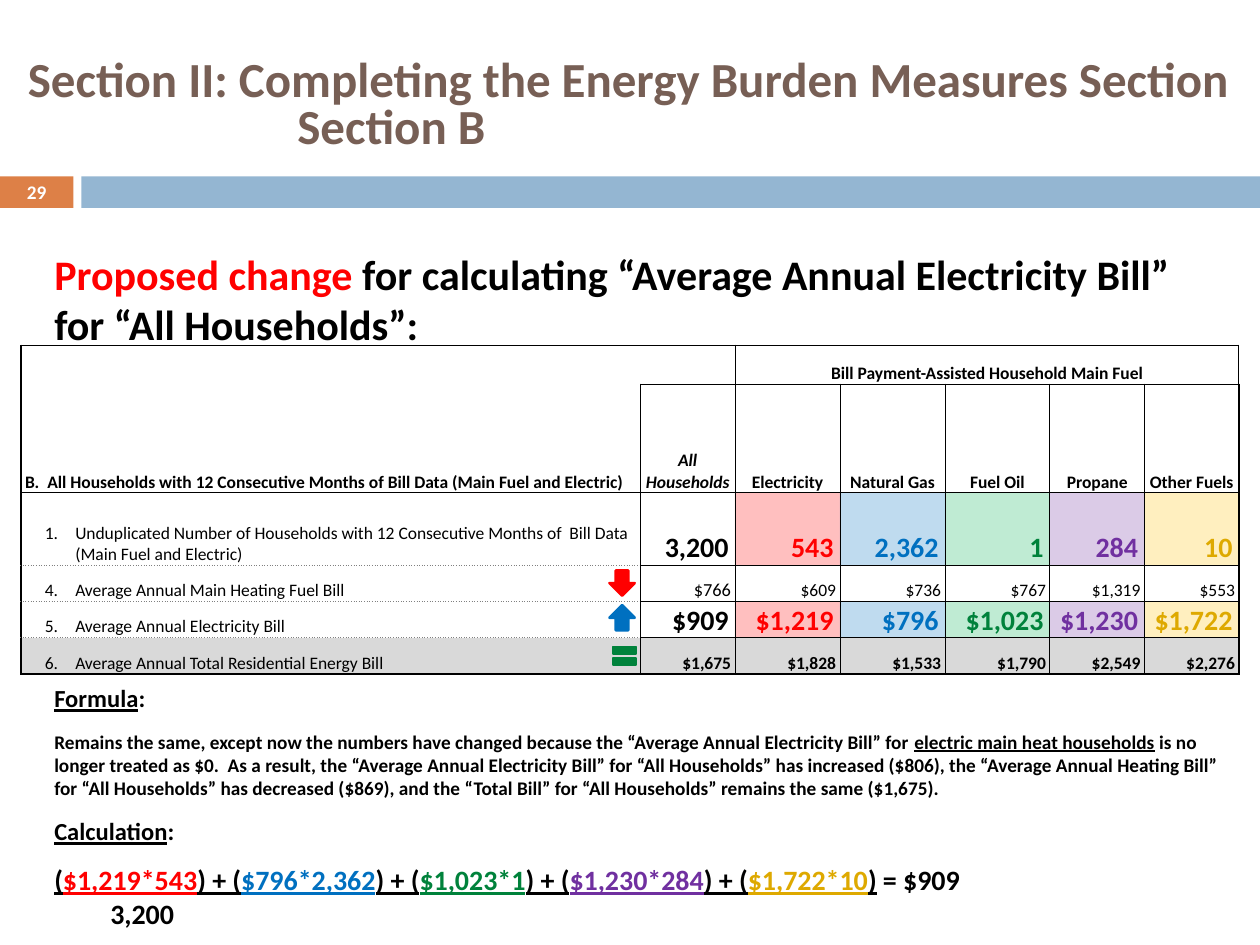
import pptx
import pptx.util
import pptx.dml.color
import pptx.enum.shapes
import pptx.enum.text
import lxml.etree
from pptx.oxml.ns import qn

Pt = pptx.util.Pt
SHAPE = pptx.enum.shapes.MSO_SHAPE
ALIGN = pptx.enum.text.PP_ALIGN
ANCHOR = pptx.enum.text.MSO_ANCHOR
FONT = "Calibri"
BLACK, WHITE, GREY = "000000", "FFFFFF", "D9D9D9"
RED, BLUE, GREEN, PURPLE, GOLD = "FF0000", "0070C0", "00823B", "7030A0", "DEA900"
FUEL_COLOURS = [RED, BLUE, GREEN, PURPLE, GOLD]
FUEL_TINTS = [RED, BLUE, "00B050", PURPLE, "FFC000"]

# Content
TITLE = "Section II: Completing the Energy Burden Measures Section Section B"
PAGE_NUMBER = "29"
FORMULA_TERMS = ["$1,219*543", "$796*2,362", "$1,023*1", "$1,230*284", "$1,722*10"]
UNDER = {"underline": True}

calculation = [("(", UNDER)]
for number, (term, tone) in enumerate(zip(FORMULA_TERMS, FUEL_COLOURS)):
    joint = ") + (" if number < len(FORMULA_TERMS) - 1 else ")"
    calculation += [(term, {"underline": True, "color": tone}), (joint, UNDER)]
calculation.append((" = $909", {}))

# Each paragraph: size, space before, left indent, spans
BODY = [
    (24, 0, 0, [("Proposed change ", {"color": RED}),
                ("for calculating “Average Annual Electricity Bill” for “All Households”:", {})]),
    (14, 191, 0, [("Formula", UNDER), (":", {})]),
    (11, 9.8, 0, [
        ("Remains the same, except now the numbers have changed because the "
         "“Average Annual Electricity Bill” for ", {}),
        ("electric main heat households", UNDER),
        (" is no longer treated as $0.  As a result, the “Average Annual Electricity Bill” "
         "for “All Households” has increased ($806), the “Average Annual Heating Bill” for "
         "“All Households” has decreased ($869), and the “Total Bill” for “All Households” "
         "remains the same ($1,675).", {})]),
    (14, 9.8, 0, [("Calculation", UNDER), (":", {})]),
    (16, 9.8, 0, calculation),
    (16, 0, 32, [("3,200", {})]),
]

SPAN_HEADING = "Bill Payment-Assisted Household Main Fuel"
HEADINGS = ["B.  All Households with 12 Consecutive Months of Bill Data (Main Fuel and Electric)",
            "All Households", "Electricity", "Natural Gas", "Fuel Oil", "Propane", "Other Fuels"]
# Each row: label, kind, values
MEASURES = [
    ("1.\tUnduplicated Number of Households with 12 Consecutive Months of  Bill Data "
     "(Main Fuel and Electric)", "key", ["3,200", "543", "2,362", "1", "284", "10"]),
    ("4.\tAverage Annual Main Heating Fuel Bill", "plain",
     ["$766", "$609", "$736", "$767", "$1,319", "$553"]),
    ("5.\tAverage Annual Electricity Bill", "key",
     ["$909", "$1,219", "$796", "$1,023", "$1,230", "$1,722"]),
    ("6.\tAverage Annual Total Residential Energy Bill", "total",
     ["$1,675", "$1,828", "$1,533", "$1,790", "$2,549", "$2,276"]),
]
COLUMN_WIDTHS = [354, 54, 60, 60, 60, 54, 54]
ROW_UNIT = 20.72
ROW_UNITS = [1, 3, 2, 1, 1, 1]
TABLE_LEFT, TABLE_TOP = 12, 197.4


def colour(value):
    return pptx.dml.color.RGBColor.from_string(value)


def add_span(para, text, **changes):
    span = para.add_run()
    span.text = text
    values = {"name": FONT, "size": 10, "bold": False, "color": BLACK, **changes}
    span.font.color.rgb = colour(values.pop("color"))
    values["size"] = Pt(values["size"])
    for name, value in values.items():
        setattr(span.font, name, value)


def set_frame(frame, **changes):
    values = {"word_wrap": True, "auto_size": pptx.enum.text.MSO_AUTO_SIZE.NONE, **changes}
    for name, value in values.items():
        setattr(frame, name, value)


def place(shape, left, top, width, height):
    shape.left, shape.top, shape.width, shape.height = map(Pt, (left, top, width, height))


def indent(para, left, first=0):
    properties = para._p.get_or_add_pPr()
    properties.set("marL", str(Pt(left)))
    properties.set("indent", str(Pt(first)))
    return properties


def add_block(page, kind, box, fill, line_width=0):
    block = page.shapes.add_shape(kind, *map(Pt, box))
    block.shadow.inherit = False
    block.fill.solid()
    block.fill.fore_color.rgb = colour(fill)
    if line_width:
        block.line.color.rgb = colour(fill)
        block.line.width = Pt(line_width)
    else:
        block.line.fill.background()


def border_of(row, column, side):
    """Width, colour and dash of one side of a cell; None for no line."""
    outer = {"L": column == 0, "R": column == 6, "T": row == 0, "B": row == 5}
    if outer[side]:
        return 1, BLACK, "solid"
    open_sides = {(0, 0): "RB", (0, 1): "L", (1, 0): "T"}
    if side in open_sides.get((row, column), ""):
        return None
    if column == 0 and ((side == "T" and row > 2) or (side == "B" and row > 1)):
        return 0.75, "808080", "sysDot"
    return 0.5, BLACK, "solid"


def draw_borders(cell, row, column):
    properties = cell._tc.get_or_add_tcPr()
    for side in "LRTB":
        line = lxml.etree.SubElement(properties, qn("a:ln" + side))
        border = border_of(row, column, side)
        if border is None:
            lxml.etree.SubElement(line, qn("a:noFill"))
            continue
        width, tone, dash = border
        line.set("w", str(Pt(width)))
        fill = lxml.etree.SubElement(line, qn("a:solidFill"))
        lxml.etree.SubElement(fill, qn("a:srgbClr"), val=tone)
        lxml.etree.SubElement(line, qn("a:prstDash"), val=dash)


def fill_cell(cell, tone=None, opacity=100):
    if tone is None:
        cell.fill.background()
        return
    cell.fill.solid()
    cell.fill.fore_color.rgb = colour(tone)
    if opacity < 100:
        fill = cell._tc.tcPr.find(qn("a:solidFill"))
        lxml.etree.SubElement(fill[0], qn("a:alpha"), val=str(opacity * 1000))


def write_cell(cell, text, align, **font):
    para = cell.text_frame.paragraphs[0]
    para.alignment = align
    add_span(para, text, **font)
    return para


deck = pptx.Presentation()
deck.slide_width, deck.slide_height = Pt(720), Pt(540)
page = deck.slides.add_slide(deck.slide_layouts[1])
title, body = page.placeholders

# Title
place(title, 0, 22.3, 720, 77.8)
set_frame(title.text_frame, vertical_anchor=ANCHOR.MIDDLE)
para = title.text_frame.paragraphs[0]
para.alignment, para.line_spacing = ALIGN.LEFT, 0.8
indent(para, 162.7, -154)
add_span(para, TITLE, size=28, bold=True, color="775F55")

# Body
place(body, 23.8, 138.2, 684, 390)
set_frame(body.text_frame, vertical_anchor=ANCHOR.TOP)
for number, (size, before, left, spans) in enumerate(BODY):
    para = body.text_frame.paragraphs[0] if number == 0 else body.text_frame.add_paragraph()
    para.space_before, para.space_after, para.line_spacing = Pt(before), Pt(0), 1.0
    lxml.etree.SubElement(indent(para, left), qn("a:buNone"))
    for text, changes in spans:
        add_span(para, text, **{"size": size, "bold": True, **changes})

# Band and page number
add_block(page, SHAPE.RECTANGLE, (0, 100.8, 42, 18), "DD8047")
add_block(page, SHAPE.RECTANGLE, (46.5, 100.8, 673.5, 18), "94B6D2")
box = page.shapes.add_textbox(*map(Pt, (0, 100.1, 42, 19.4)))
set_frame(box.text_frame, vertical_anchor=ANCHOR.MIDDLE)
para = box.text_frame.paragraphs[0]
para.alignment = ALIGN.CENTER
add_span(para, PAGE_NUMBER, size=11, bold=True, color=WHITE)

# Table grid
frame = page.shapes.add_table(
    len(ROW_UNITS), len(COLUMN_WIDTHS), Pt(TABLE_LEFT), Pt(TABLE_TOP),
    Pt(sum(COLUMN_WIDTHS)), Pt(ROW_UNIT * sum(ROW_UNITS)))
table = frame.table
table.first_row = table.horz_banding = False
for column, width in zip(table.columns, COLUMN_WIDTHS):
    column.width = Pt(width)
for row, units in zip(table.rows, ROW_UNITS):
    row.height = Pt(ROW_UNIT * units)
for r in range(len(ROW_UNITS)):
    for c in range(len(COLUMN_WIDTHS)):
        cell = table.cell(r, c)
        cell.margin_left = cell.margin_right = cell.margin_top = cell.margin_bottom = 0
        cell.vertical_anchor = ANCHOR.BOTTOM
        draw_borders(cell, r, c)
        fill_cell(cell)

# Table headings
table.cell(0, 2).merge(table.cell(0, 6))
write_cell(table.cell(0, 2), SPAN_HEADING, ALIGN.CENTER, bold=True)
for c, heading in enumerate(HEADINGS):
    para = write_cell(table.cell(1, c), heading, ALIGN.CENTER if c else ALIGN.LEFT,
                      bold=True, italic=c == 1)
    if c == 0:
        indent(para, 2.3)
fill_cell(table.cell(1, 0), WHITE)

# Table measures
for r, (label, kind, values) in enumerate(MEASURES, start=2):
    indent(write_cell(table.cell(r, 0), label, ALIGN.LEFT), 31, -17.4)
    size = 16 if kind == "key" else 10
    for c, value in enumerate(values, start=1):
        cell = table.cell(r, c)
        cell.margin_right = Pt(size * 0.23)
        tone = FUEL_COLOURS[c - 2] if kind == "key" and c > 1 else BLACK
        write_cell(cell, value, ALIGN.RIGHT, size=10.5 if value == "$766" else size,
                   bold=kind != "plain", color=tone)
        if kind == "key" and c > 1:
            fill_cell(cell, FUEL_TINTS[c - 2], 25)
    if kind == "total":
        for c in range(len(COLUMN_WIDTHS)):
            fill_cell(table.cell(r, c), GREY)

# Row signs
add_block(page, SHAPE.MATH_EQUAL, (347.8, 365.8, 18, 18), GREEN, 1)
add_block(page, SHAPE.DOWN_ARROW, (348.3, 326, 14.4, 14.4), RED, 1.5)
add_block(page, SHAPE.UP_ARROW, (348.3, 345.8, 14.4, 14.4), BLUE, 1.5)

deck.save("out.pptx")
